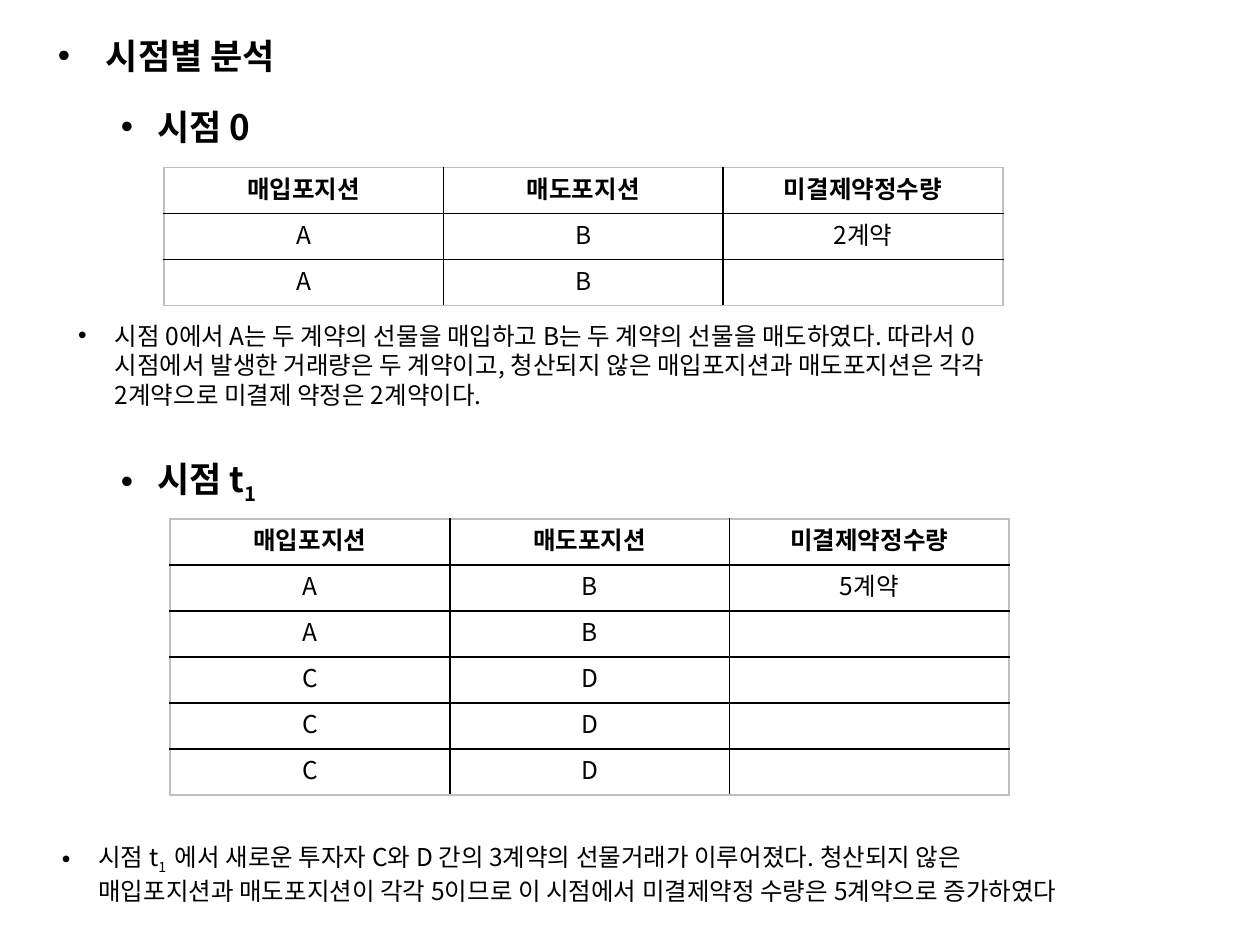
from lxml import etree
from pptx import Presentation
from pptx.dml.color import RGBColor
from pptx.enum.text import MSO_ANCHOR, MSO_AUTO_SIZE, PP_ALIGN
from pptx.oxml.ns import qn
from pptx.util import Inches, Pt

LEFT, CENTER = PP_ALIGN.LEFT, PP_ALIGN.CENTER
TOP, MIDDLE = MSO_ANCHOR.TOP, MSO_ANCHOR.MIDDLE
GROW = MSO_AUTO_SIZE.SHAPE_TO_FIT_TEXT
FONT = "Noto Sans CJK KR"
BLACK, GRAY, WHITE = "000000", "BFBFBF", "FFFFFF"
HEADING, BODY = 20, 14
COL_W, ROW_H = 2.22, 0.36
HEADER = ["매입포지션", "매도포지션", "미결제약정수량"]


def rgb(color):
    return RGBColor.from_string(color)


def add_run(p, text, size, bold=False, baseline=0):
    r = p.add_run()
    r.text = text
    r.font.size = Pt(size)
    r.font.bold = bold
    r.font.name = FONT
    r.font.color.rgb = rgb(BLACK)
    rPr = r.font._element
    etree.SubElement(rPr, qn("a:ea")).set("typeface", FONT)
    if baseline:
        rPr.set("baseline", str(baseline * 1000))


def set_bullet(p, margin, hang):
    pPr = p._p.get_or_add_pPr()
    pPr.set("marL", str(Inches(margin)))
    pPr.set("indent", str(-Inches(hang)))
    etree.SubElement(pPr, qn("a:buFont")).set("typeface", "Arial")
    etree.SubElement(pPr, qn("a:buChar")).set("char", "•")


def fill_bullet(s, box, runs, size, bold=False, margin=2.29, hang=0.29):
    s.left, s.top, s.width, s.height = [Inches(v) for v in box]
    tf = s.text_frame
    tf.word_wrap = True
    tf.auto_size = GROW
    tf.vertical_anchor = TOP
    p = tf.paragraphs[0]
    set_bullet(p, margin, hang)
    p.alignment = LEFT
    p.space_before = Pt(0)
    p.line_spacing = Pt(round(size * 1.22, 1))
    for text, baseline in runs:
        add_run(p, text, size, bold, baseline)


def set_border(cell, side, color):
    ln = etree.SubElement(cell._tc.get_or_add_tcPr(), qn("a:" + side))
    ln.set("w", str(Pt(1)))
    fill = etree.SubElement(ln, qn("a:solidFill"))
    etree.SubElement(fill, qn("a:srgbClr")).set("val", color)


def fill_cell(cell, text, bold, outer):
    for side in ("lnL", "lnR", "lnT", "lnB"):
        set_border(cell, side, GRAY if side in outer else BLACK)
    cell.fill.solid()
    cell.fill.fore_color.rgb = rgb(WHITE)
    cell.vertical_anchor = MIDDLE
    cell.margin_top = cell.margin_bottom = Inches(0.03)
    p = cell.text_frame.paragraphs[0]
    p.alignment = CENTER
    p.line_spacing = Pt(17)
    if text:
        add_run(p, text, BODY, bold)


def add_position_table(slide, left, top, pairs, total):
    rows = [HEADER] + [[buyer, seller, "" if i else total]
                       for i, (buyer, seller) in enumerate(pairs)]
    n, m = len(rows), len(HEADER)
    table = slide.shapes.add_table(n, m, Inches(left), Inches(top),
                                   Inches(COL_W * m), Inches(ROW_H * n)).table
    table.horz_banding = False
    for col in table.columns:
        col.width = Inches(COL_W)
    for i, row in enumerate(rows):
        table.rows[i].height = Inches(ROW_H + 0.005)
        for j, text in enumerate(row):
            edges = {"lnL": j == 0, "lnR": j == m - 1,
                     "lnT": i == 0, "lnB": i == n - 1}
            outer = [side for side, on in edges.items() if on]
            fill_cell(table.cell(i, j), text, i == 0, outer)


def add_period(slide, heading, heading_box, heading_runs, note, note_box, note_runs, table):
    fill_bullet(heading, heading_box, heading_runs, HEADING, bold=True)
    add_position_table(slide, *table)
    fill_bullet(note, note_box, note_runs, BODY)


def main():
    prs = Presentation()
    prs.slide_width, prs.slide_height = Inches(10), Inches(7.5)
    slide = prs.slides.add_slide(prs.slide_layouts.get_by_name("Comparison"))
    title, head_0, note_0, head_1, note_1 = list(slide.placeholders)[:5]

    fill_bullet(title, (-1.14, 0.22, 9.53, 0.44), [("시점별 분석", 0)],
                HEADING, bold=True, margin=1.88, hang=0.38)
    add_period(
        slide, head_0, (-1.14, 0.78, 9.53, 0.44), [("시점 0", 0)],
        note_0, (-1.48, 2.49, 9.53, 0.81),
        [("시점 0에서 A는 두 계약의 선물을 매입하고 B는 두 계약의 선물을 매도하였다. "
          "따라서 0시점에서 발생한 거래량은 두 계약이고, 청산되지 않은 매입포지션과 "
          "매도포지션은 각각 2계약으로 미결제 약정은 2계약이다.", 0)],
        (1.3, 1.33, ["AB"] * 2, "2계약"))
    add_period(
        slide, head_1, (-1.14, 3.62, 9.53, 0.44), [("시점 t", 0), ("1", -25)],
        note_1, (-1.61, 6.66, 10.16, 0.81),
        [("시점 t", 0), ("1 ", -25),
         (" 에서 새로운 투자자 C와 D 간의 3계약의 선물거래가 이루어졌다. "
          "청산되지 않은 매입포지션과 매도포지션이 각각 5이므로 이 시점에서 "
          "미결제약정 수량은 5계약으로 증가하였다", 0)],
        (1.35, 4.12, ["AB"] * 2 + ["CD"] * 3, "5계약"))
    prs.save("out.pptx")


if __name__ == "__main__":
    main()
